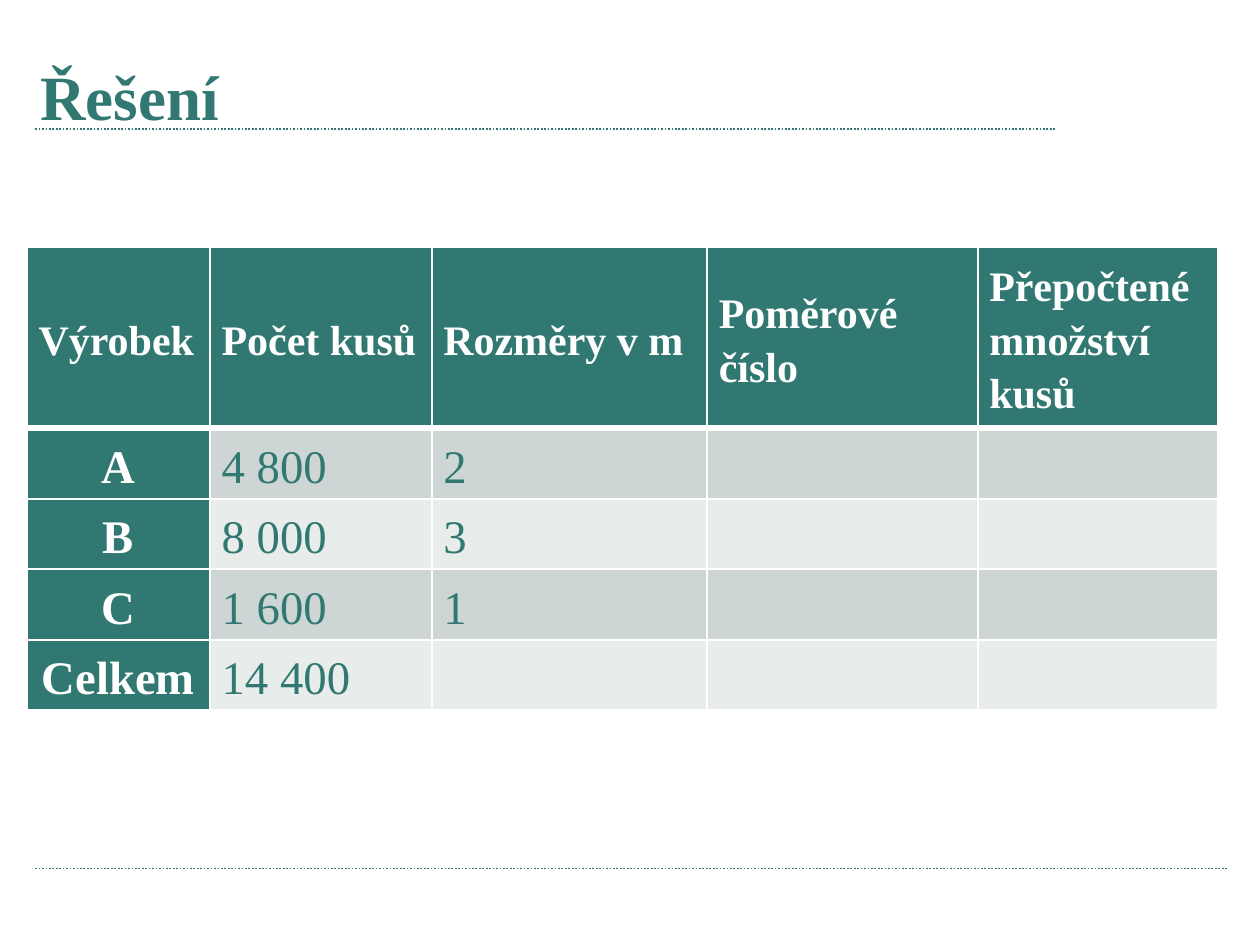
from lxml.etree import SubElement
from pptx import Presentation
from pptx.dml.color import RGBColor
from pptx.enum.dml import MSO_LINE
from pptx.enum.shapes import MSO_CONNECTOR
from pptx.enum.text import MSO_ANCHOR as Anchor, PP_ALIGN as Align
from pptx.oxml.ns import qn
from pptx.util import Inches, Pt

TEAL, WHITE = "307871", "FFFFFF"
BANDS = ["CDD6D5", "E8ECEB"]
FONT = "Times New Roman"
SLIDE_WIDTH = 7.5
SLIDE_HEIGHT = SLIDE_WIDTH * 3 / 4
COLUMN_WIDTHS = [1.09, 1.32, 1.64, 1.61, 1.43]
HEADER_HEIGHT, ROW_HEIGHT = 1.08, 0.42
ROWS = [
    ["Výrobek", "Počet kusů", "Rozměry v m", "Poměrové číslo", "Přepočtené množství kusů"],
    ["A", "4 800", "2", "", ""],
    ["B", "8 000", "3", "", ""],
    ["C", "1 600", "1", "", ""],
    ["Celkem", "14 400", "", "", ""],
]


def color(value):
    """Return the colour for a hex string."""
    return RGBColor.from_string(value)


def write(frame, text, size=20, ink=TEAL, bold=False, align=Align.LEFT, spacing=1.0):
    """Put one formatted paragraph into a text frame."""
    frame.word_wrap = True
    paragraph = frame.paragraphs[0]
    paragraph.alignment = align
    paragraph.line_spacing = spacing
    paragraph.space_before = Pt(0)
    font = paragraph.font
    if text:
        run = paragraph.add_run()
        run.text = text
        font = run.font
    font.name, font.size, font.bold = FONT, Pt(size), bold
    font.color.rgb = color(ink)


def add_title(slide, text):
    """Place and fill the title placeholder."""
    title = slide.shapes.title
    title.left, title.top = Inches(0.14), Inches(0.29)
    title.width, title.height = Inches(6.61), Inches(0.59)
    title.text_frame.vertical_anchor = Anchor.MIDDLE
    title.text_frame.margin_bottom = Inches(0.09)
    write(title.text_frame, text, size=27, bold=True)


def add_rule(slide, right, y):
    """Draw a dotted horizontal rule from the left margin."""
    rule = slide.shapes.add_connector(
        MSO_CONNECTOR.STRAIGHT, Inches(0.21), Inches(y), Inches(right), Inches(y))
    rule.line.color.rgb = color(TEAL)
    rule.line.width = Pt(0.75)
    rule.line.dash_style = MSO_LINE.ROUND_DOT
    SubElement(rule._element.spPr, qn("a:effectLst"))


def set_borders(cell, top, bottom):
    """Give a cell white borders, one point wide at the sides."""
    properties = cell._tc.get_or_add_tcPr()
    for side, width in zip("LRTB", (1, 1, top, bottom)):
        line = SubElement(properties, qn(f"a:ln{side}"), w=str(Pt(width)))
        fill = SubElement(line, qn("a:solidFill"))
        SubElement(fill, qn("a:srgbClr"), val=WHITE)


def format_cell(cell, text, row, column):
    """Fill and style a cell by its place in the table."""
    is_header, is_label = row == 0, column == 0
    is_dark = is_header or is_label
    set_borders(cell, top=3 if row == 1 else 1, bottom=3 if is_header else 1)
    cell.fill.solid()
    cell.fill.fore_color.rgb = color(TEAL if is_dark else BANDS[(row - 1) % 2])
    cell.vertical_anchor = Anchor.MIDDLE
    cell.margin_left = cell.margin_right = Inches(0.07)
    cell.margin_top = cell.margin_bottom = 0
    write(cell.text_frame, text, size=18 if is_header else 20,
          ink=WHITE if is_dark else TEAL, bold=is_dark, spacing=1.15,
          align=Align.CENTER if is_label and not is_header else Align.JUSTIFY)


def add_product_table(slide):
    """Add the table of products."""
    heights = [HEADER_HEIGHT] + [ROW_HEIGHT] * (len(ROWS) - 1)
    table = slide.shapes.add_table(
        len(ROWS), len(COLUMN_WIDTHS), Inches(0.16), Inches(1.47),
        Inches(sum(COLUMN_WIDTHS)), Inches(sum(heights))).table
    for column, width in zip(table.columns, COLUMN_WIDTHS):
        column.width = Inches(width)
    for row, height in zip(table.rows, heights):
        row.height = Inches(height)
    for row, texts in enumerate(ROWS):
        for column, text in enumerate(texts):
            format_cell(table.cell(row, column), text, row, column)


def main():
    """Build and save the slide."""
    presentation = Presentation()
    presentation.slide_width = Inches(SLIDE_WIDTH)
    presentation.slide_height = Inches(SLIDE_HEIGHT)
    slide = presentation.slides.add_slide(presentation.slide_layouts[5])
    add_rule(slide, right=6.29, y=0.77)
    add_rule(slide, right=7.31, y=5.17)
    add_title(slide, "Řešení")
    add_product_table(slide)
    presentation.save("out.pptx")


if __name__ == "__main__":
    main()
